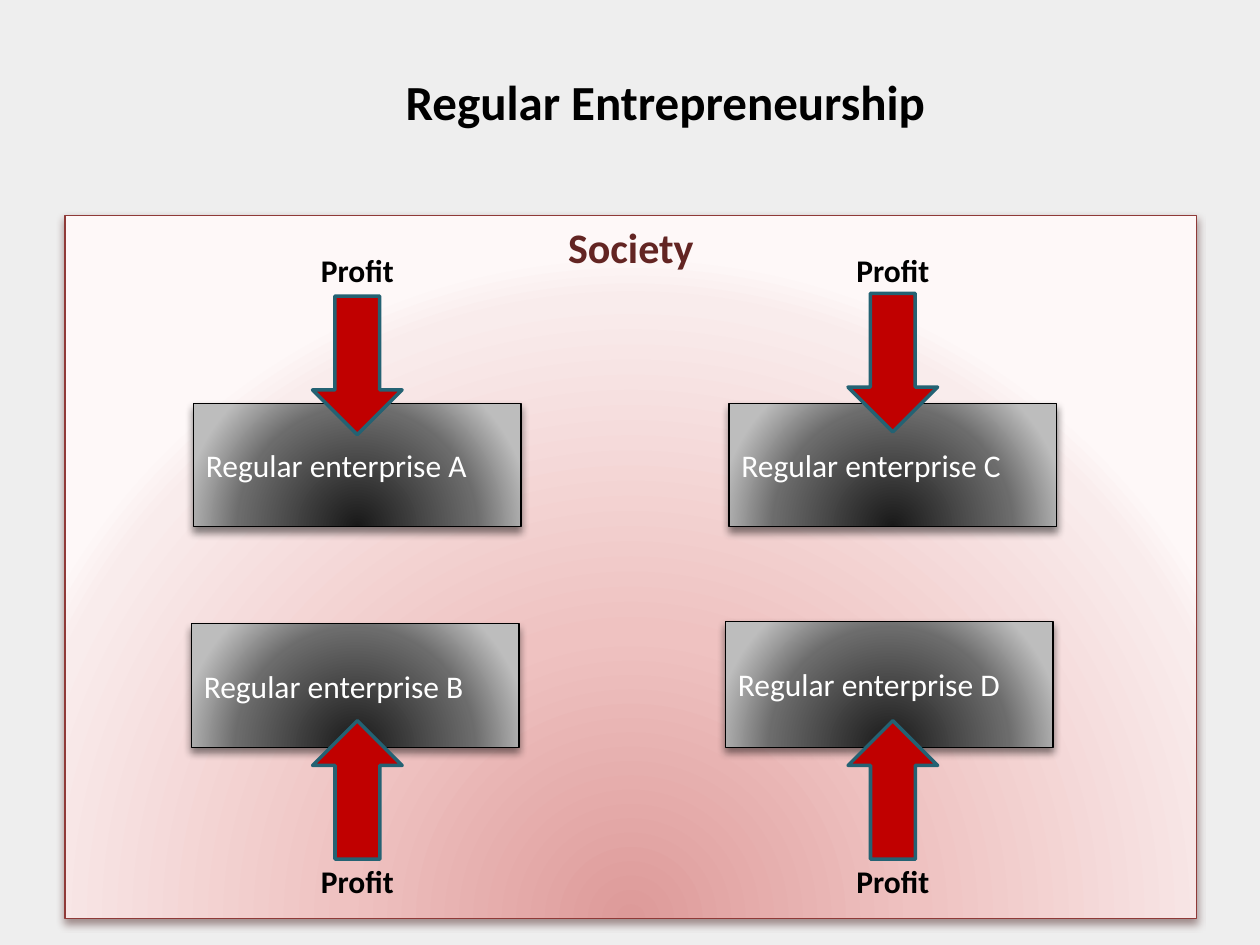
from dataclasses import dataclass

from pptx import Presentation
from pptx.dml.color import RGBColor
from pptx.enum import shapes, text
from pptx.oxml import parse_xml
from pptx.oxml.ns import nsdecls, qn
from pptx.util import Pt


@dataclass(frozen=True)
class Theme:
    font: str = "Calibri"
    back: str = "EEEEEE"
    ink: str = "000000"
    pale: str = "FFFFFF"
    wine: str = "632523"
    rim: str = "8F3A38"
    shade: str = "441B1A"
    arrow: str = "C00000"
    edge: str = "246273"
    rose: tuple = ((0, "DD9A99"), (43, "EFC2C1"), (93, "F9ECEC"), (100, "FEF8F8"))
    coal: tuple = ((0, "191919"), (68, "6C6C6C"), (100, "BDBDBD"))
    title: int = 28
    head: int = 24
    body: int = 18


THEME = Theme()
SHAPE = shapes.MSO_SHAPE
ALIGN = text.PP_ALIGN
ANCHOR = text.MSO_ANCHOR


def write(shape, words, size, color, bold=True, align=ALIGN.CENTER, anchor=ANCHOR.TOP):
    frame = shape.text_frame
    look = dict(word_wrap=True, auto_size=text.MSO_AUTO_SIZE.NONE, vertical_anchor=anchor,
                margin_left=Pt(7.2), margin_right=Pt(7.2),
                margin_top=Pt(3.6), margin_bottom=Pt(3.6))
    for key, value in look.items():
        setattr(frame, key, value)
    para = frame.paragraphs[0]
    para.alignment = align
    run = para.add_run()
    run.text = words
    for key, value in dict(name=THEME.font, size=Pt(size), bold=bold).items():
        setattr(run.font, key, value)
    run.font.color.rgb = RGBColor.from_string(color)


def draw(slide, kind, box, line, width):
    shape = slide.shapes.add_shape(kind, *map(Pt, box))
    shape.shadow.inherit = False
    shape.line.color.rgb = RGBColor.from_string(line)
    shape.line.width = Pt(width)
    return shape


def panel(slide, box, stops, line, shade):
    """Draw a rectangle with a radial glow from below and a soft shadow."""
    shape = draw(slide, SHAPE.RECTANGLE, box, line, 0.75)
    shape.fill.gradient()
    props = shape.element.spPr
    marks = "".join(f'<a:gs pos="{pos * 1000}"><a:srgbClr val="{color}"/></a:gs>'
                    for pos, color in stops)
    glow = parse_xml(
        f'<a:gradFill {nsdecls("a")} rotWithShape="1"><a:gsLst>{marks}</a:gsLst>'
        '<a:path path="circle"><a:fillToRect l="50000" t="130000" r="50000" b="-30000"/>'
        '</a:path></a:gradFill>')
    props.replace(props.find(qn("a:gradFill")), glow)
    props.find(qn("a:effectLst")).append(parse_xml(
        f'<a:outerShdw {nsdecls("a")} blurRad="{Pt(4.5)}" dist="{Pt(3)}" dir="5400000" '
        f'rotWithShape="0"><a:srgbClr val="{shade}"><a:alpha val="48000"/></a:srgbClr>'
        '</a:outerShdw>'))
    return shape


def title(slide, box, words):
    shape = slide.shapes.title
    for key, value in zip(("left", "top", "width", "height"), box):
        setattr(shape, key, Pt(value))
    write(shape, words, THEME.title, THEME.ink)


def society(slide, box):
    shape = panel(slide, box, THEME.rose, THEME.rim, THEME.shade)
    write(shape, "Society", THEME.head, THEME.wine)


def firm(slide, box, name):
    shape = panel(slide, box, THEME.coal, THEME.ink, THEME.ink)
    write(shape, f"Regular enterprise {name}", THEME.body, THEME.pale,
          bold=False, align=ALIGN.LEFT, anchor=ANCHOR.MIDDLE)


def profit(slide, mid, top, label, turn):
    """Draw an arrow centred on mid, with its label at the given height."""
    wide, high = 51.2, 79.2
    shape = draw(slide, SHAPE.DOWN_ARROW, (mid - wide / 2, top, wide, high), THEME.edge, 2)
    shape.fill.solid()
    shape.fill.fore_color.rgb = RGBColor.from_string(THEME.arrow)
    shape.rotation = turn
    wide = 96.5
    note = slide.shapes.add_textbox(*map(Pt, (mid - wide / 2, label, wide, 29)))
    write(note, "Profit", THEME.body, THEME.ink)


def main():
    deck = Presentation()
    deck.slide_width, deck.slide_height = Pt(720), Pt(540)
    slide = deck.slides.add_slide(deck.slide_layouts[5])
    slide.background.fill.solid()
    slide.background.fill.fore_color.rgb = RGBColor.from_string(THEME.back)

    title(slide, (150.5, 37.4, 459.4, 41), "Regular Entrepreneurship")
    society(slide, (37.2, 123, 646.6, 402))
    wide = 187.2
    left, right = 204.2, 510.2
    firms = (("Α", left, 230.4, 70.6), ("Β", left - 1.2, 356.4, 70.6),
             ("C", right, 230.4, 70.6), ("D", right - 2, 355, 72))
    for name, mid, top, high in firms:
        firm(slide, (mid - wide / 2, top, wide, high), name)
    for mid, top in ((left, 169.2), (right, 167.6)):
        profit(slide, mid, top, 139.7, 0)
        profit(slide, mid, 411.8, 488.9, 180)
    deck.save("out.pptx")


if __name__ == "__main__":
    main()
